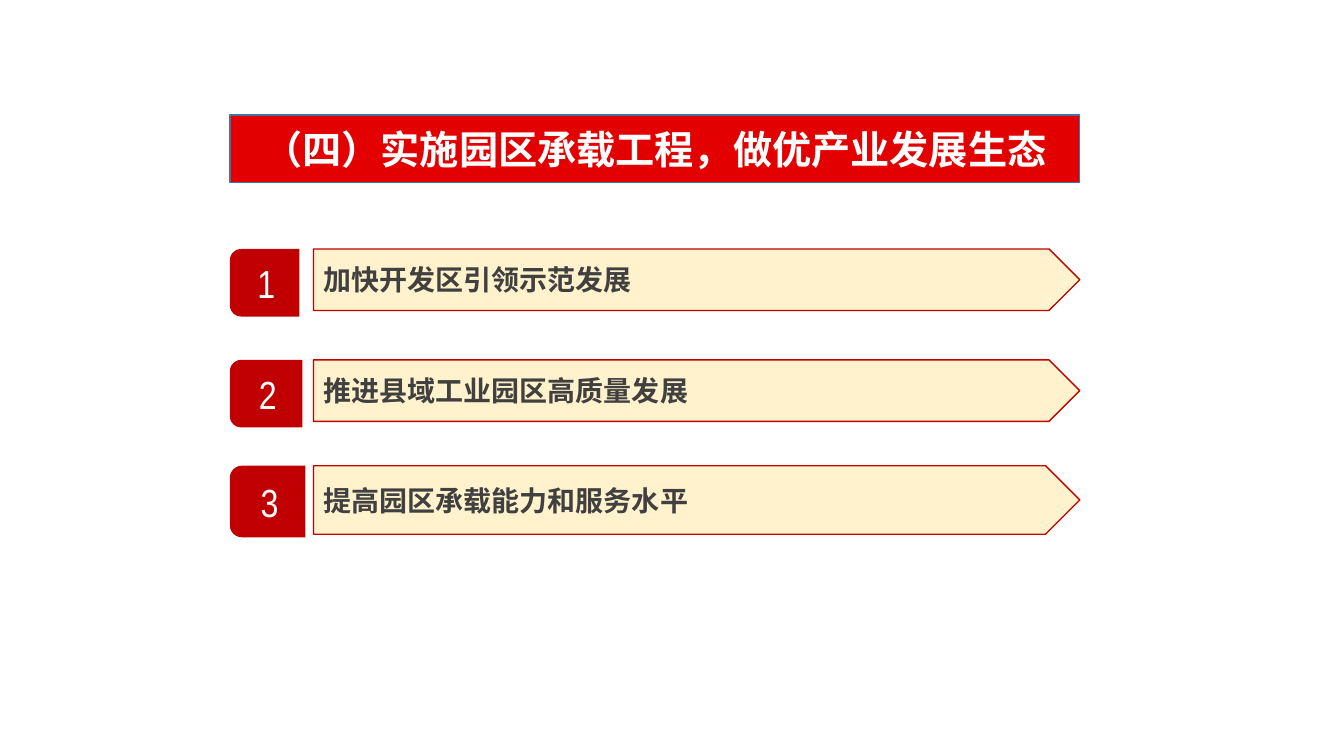
from dataclasses import dataclass

from lxml import etree
from pptx import Presentation
from pptx.dml.color import RGBColor
from pptx.enum import shapes, text
from pptx.oxml import ns
from pptx.util import Inches, Pt


@dataclass(frozen=True)
class Theme:
    banner: str = "E30000"
    banner_line: str = "43739E"
    red: str = "C00000"
    cream: str = "FFF2CC"
    dark: str = "404040"
    white: str = "FFFFFF"
    cjk: str = "Noto Sans CJK SC"
    title_font: str = "Calibri"
    number_font: str = "Arial Narrow"
    large: int = 28
    body: int = 20


THEME = Theme()
LEFT, RIGHT = 2.28, 10.71
ARROW_LEFT = 3.11
ITEMS = [
    ("加快开发区引领示范发展", 2.47, 0.61, 0.69, 0.67),
    ("推进县域工业园区高质量发展", 3.57, 0.61, 0.72, 0.67),
    ("提高园区承载能力和服务水平", 4.62, 0.68, 0.75, 0.71),
]


def add_block(s, kind, box, fill, line=None):
    sp = s.shapes.add_shape(kind, *(Inches(v) for v in box))
    sp.shadow.inherit = False
    sp.fill.solid()
    sp.fill.fore_color.rgb = RGBColor.from_string(fill)
    if line:
        sp.line.color.rgb = RGBColor.from_string(line)
        sp.line.width = Pt(1)
    else:
        sp.line.fill.background()
    return sp


def set_text(sp, words, size, color, font, bold=False, align=text.PP_ALIGN.CENTER):
    tf = sp.text_frame
    tf.word_wrap = True
    tf.vertical_anchor = text.MSO_ANCHOR.MIDDLE
    p = tf.paragraphs[0]
    p.text = words
    p.alignment = align
    p.font.size = Pt(size)
    p.font.bold = bold
    p.font.name = font
    p.font.color.rgb = RGBColor.from_string(color)
    props = p._p.pPr.find(ns.qn("a:defRPr"))
    etree.SubElement(props, ns.qn("a:ea"), typeface=THEME.cjk)


def add_banner(s, words):
    sp = add_block(s, shapes.MSO_SHAPE.FLOWCHART_PROCESS,
                   (LEFT, 1.14, RIGHT - LEFT, 0.67), THEME.banner, THEME.banner_line)
    set_text(sp, words, THEME.large, THEME.white, THEME.title_font, bold=True)


def add_arrow(s, words, top, height):
    sp = add_block(s, shapes.MSO_SHAPE.PENTAGON,
                   (ARROW_LEFT, top, RIGHT - ARROW_LEFT, height), THEME.cream, THEME.red)
    set_text(sp, words, THEME.body, THEME.dark, THEME.cjk, bold=True,
             align=text.PP_ALIGN.LEFT)


def add_badge(s, number, top, width, height):
    shift = (width - height) / 2
    sp = add_block(s, shapes.MSO_SHAPE.ROUND_2_SAME_RECTANGLE,
                   (LEFT + shift, top - shift, height, width), THEME.red)
    sp.rotation = 270
    set_text(sp, str(number), THEME.large, THEME.white, THEME.number_font)
    sp.text_frame._txBody.bodyPr.set("vert", "vert")


def main():
    prs = Presentation()
    prs.slide_width, prs.slide_height = Inches(13.33), Inches(7.5)
    s = prs.slides.add_slide(prs.slide_layouts[6])
    add_banner(s, "（四）实施园区承载工程，做优产业发展生态")
    for number, (words, top, height, badge_width, badge_height) in enumerate(ITEMS, 1):
        add_arrow(s, words, top, height)
        add_badge(s, number, top, badge_width, badge_height)
    prs.save("out.pptx")


if __name__ == "__main__":
    main()
